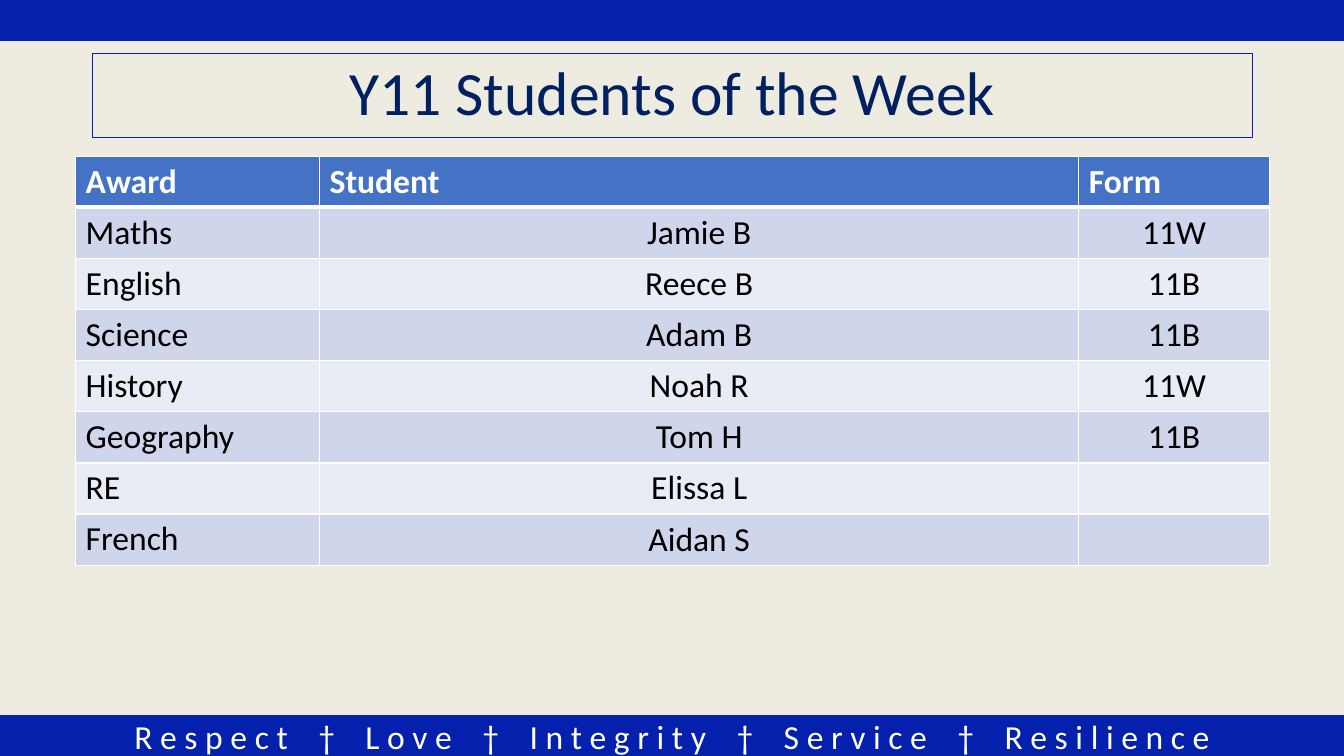
"""Build the Year 11 Students of the Week slide."""
from dataclasses import dataclass

from lxml import etree
from pptx import Presentation
from pptx.dml.color import RGBColor
from pptx.enum.shapes import MSO_SHAPE
from pptx.enum.text import MSO_ANCHOR, MSO_AUTO_SIZE, PP_ALIGN
from pptx.oxml.ns import qn
from pptx.util import Inches, Pt

RECT = MSO_SHAPE.RECTANGLE
MIDDLE, BOTTOM, TOP = MSO_ANCHOR.MIDDLE, MSO_ANCHOR.BOTTOM, MSO_ANCHOR.TOP
LEFT, CENTER = PP_ALIGN.LEFT, PP_ALIGN.CENTER
NO_FIT = MSO_AUTO_SIZE.NONE

CREAM = RGBColor(0xEE, 0xEC, 0xE1)
ROYAL = RGBColor(0x04, 0x20, 0xAC)
NAVY = RGBColor(0x00, 0x20, 0x60)
WHITE = RGBColor(0xFF, 0xFF, 0xFF)
BLACK = RGBColor(0x00, 0x00, 0x00)
HEAD = RGBColor(0x44, 0x72, 0xC4)
BANDS = (RGBColor(0xE9, 0xEB, 0xF5), RGBColor(0xCF, 0xD5, 0xEA))

FONT = "Calibri"
WIDE, HIGH, BAR = 13.33, 7.5, 0.4
COLS = (2.42, 7.53, 1.89)
ROW = 0.5
GAP = 1630
VALUES = ("Respect", "Love", "Integrity", "Service", "Resilience")


@dataclass(frozen=True)
class Award:
    """One row of the awards table."""

    topic: str
    student: str
    form: str = ""


AWARDS = (
    Award("Award", "Student", "Form"),
    Award("Maths", "Jamie B", "11W"),
    Award("English", "Reece B", "11B"),
    Award("Science", "Adam B", "11B"),
    Award("History", "Noah R", "11W"),
    Award("Geography", "Tom H", "11B"),
    Award("RE", "Elissa L"),
    Award("French", "Aidan S"),
)


def add_run(para, text: str, size: float, color: RGBColor, bold: bool = False):
    """Add one formatted run to a paragraph."""
    run = para.add_run()
    run.text = text
    font = run.font
    font.name, font.size, font.bold = FONT, Pt(size), bold
    font.color.rgb = color
    return run


def add_bar(slide, top: float):
    """Draw a full-width blue bar."""
    bar = slide.shapes.add_shape(RECT, 0, Inches(top), Inches(WIDE), Inches(BAR))
    bar.shadow.inherit = False
    bar.fill.solid()
    bar.fill.fore_color.rgb = ROYAL
    bar.line.color.rgb = ROYAL
    bar.line.width = Pt(1)
    return bar


def add_motto(bar) -> None:
    """Write the school values with daggers between them."""
    frame = bar.text_frame
    frame.vertical_anchor = MIDDLE
    para = frame.paragraphs[0]
    para.alignment = CENTER
    for index, value in enumerate(VALUES):
        if index:
            for mark in (" ", "†", " "):
                run = add_run(para, mark, 24, WHITE)
                if mark == " ":
                    run.font._element.set("spc", str(GAP))
        add_run(para, " ".join(value), 24, WHITE)


def set_title(slide) -> None:
    """Place and fill the framed title."""
    title = slide.shapes.title
    title.left, title.top = Inches(0.92), Inches(0.53)
    title.width, title.height = Inches(11.5), Inches(0.83)
    title.line.color.rgb = ROYAL
    title.line.width = Pt(0.75)
    frame = title.text_frame
    frame.auto_size = NO_FIT
    frame.word_wrap = True
    frame.vertical_anchor = MIDDLE
    para = frame.paragraphs[0]
    para.alignment = CENTER
    para.line_spacing = 0.9
    add_run(para, "Y11 Students of the Week", 44, NAVY)


def set_edges(cell, top: float, base: float) -> None:
    """Give a cell white borders."""
    props = cell._tc.get_or_add_tcPr()
    edges = (("L", 1), ("R", 1), ("T", top), ("B", base))
    for index, (side, width) in enumerate(edges):
        line = etree.Element(qn(f"a:ln{side}"), w=str(Pt(width)))
        fill = etree.SubElement(line, qn("a:solidFill"))
        etree.SubElement(fill, qn("a:srgbClr"), val=str(WHITE))
        props.insert(index, line)


def fill_cell(cell, text: str, row: int, col: int) -> None:
    """Format one table cell and write its text."""
    head = row == 0
    cell.fill.solid()
    cell.fill.fore_color.rgb = HEAD if head else BANDS[row % 2]
    set_edges(cell, 3 if row == 1 else 1, 3 if head else 1)
    mid = not head and col > 0 and bool(text)
    cell.vertical_anchor = BOTTOM if mid else TOP
    if mid:
        cell.margin_left = cell.margin_right = cell.margin_top = Inches(0.01)
        cell.margin_bottom = Inches(0.05)
    para = cell.text_frame.paragraphs[0]
    para.alignment = CENTER if mid else LEFT
    if text:
        add_run(para, text, 24, WHITE if head else BLACK, head)


def add_awards(slide) -> None:
    """Draw the awards table."""
    frame = slide.shapes.add_table(
        len(AWARDS), len(COLS), Inches(0.75), Inches(1.55),
        Inches(sum(COLS)), Inches(ROW * len(AWARDS)),
    )
    table = frame.table
    for col, width in enumerate(COLS):
        table.columns[col].width = Inches(width)
    for row, award in enumerate(AWARDS):
        table.rows[row].height = Inches(ROW)
        for col, text in enumerate((award.topic, award.student, award.form)):
            fill_cell(table.cell(row, col), text, row, col)


def main() -> None:
    """Build and save the deck."""
    deck = Presentation()
    deck.slide_width, deck.slide_height = Inches(WIDE), Inches(HIGH)
    slide = deck.slides.add_slide(deck.slide_layouts[5])
    slide.background.fill.solid()
    slide.background.fill.fore_color.rgb = CREAM
    add_motto(add_bar(slide, HIGH - BAR))
    add_bar(slide, 0)
    set_title(slide)
    add_awards(slide)
    deck.save("out.pptx")


if __name__ == "__main__":
    main()
